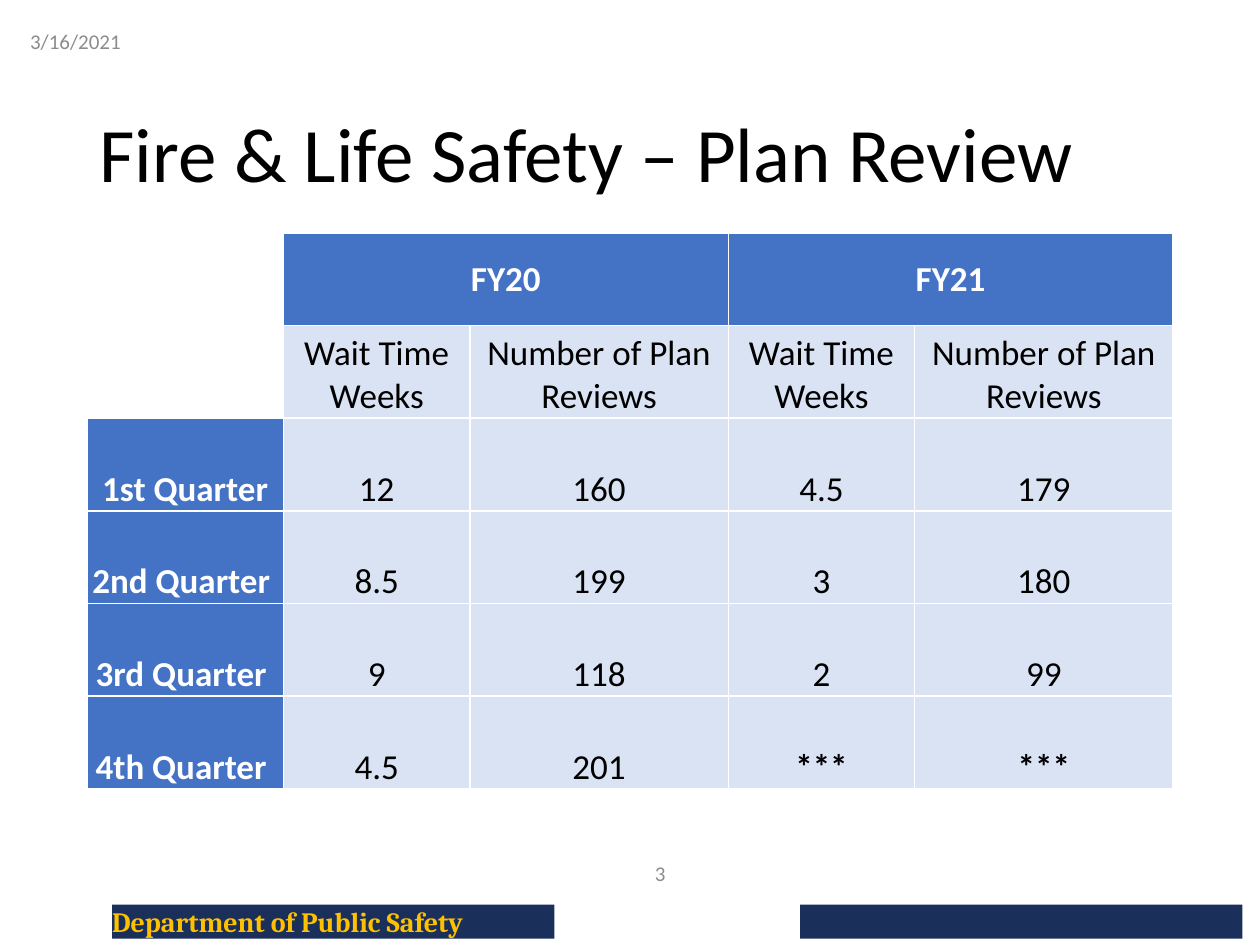
from lxml import etree
from pptx import Presentation
from pptx.dml.color import RGBColor
from pptx.enum.shapes import MSO_SHAPE
from pptx.enum.text import MSO_ANCHOR, MSO_AUTO_SIZE, PP_ALIGN
from pptx.oxml.ns import qn
from pptx.util import Inches, Pt

RECTANGLE = MSO_SHAPE.RECTANGLE
TOP, MIDDLE, BOTTOM = MSO_ANCHOR.TOP, MSO_ANCHOR.MIDDLE, MSO_ANCHOR.BOTTOM
LEFT, CENTER, RIGHT = PP_ALIGN.LEFT, PP_ALIGN.CENTER, PP_ALIGN.RIGHT
FIT_SHAPE, NO_FIT = MSO_AUTO_SIZE.SHAPE_TO_FIT_TEXT, MSO_AUTO_SIZE.NONE

COLORS = {"navy": "1A2F5A", "gold": "FFC000", "gray": "8C8C8C", "black": "000000",
          "white": "FFFFFF", "blue": "4472C4", "pale": "DAE3F3"}
COLUMNS, ROWS = 100, 75

MEASURES = ["Wait Time Weeks", "Number of Plan Reviews"]
QUARTERS = [
    ["1st Quarter", "12", "160", "4.5", "179"],
    ["2nd Quarter ", "8.5", "199", "3", "180"],
    ["3rd Quarter ", "9", "118", "2", "99"],
    ["4th Quarter ", "4.5", "201", "***", "***"],
]
TABLE_ROWS = [["", "FY20", "", "FY21", ""], ["", *MEASURES, *MEASURES], *QUARTERS]


class SlideBuilder:
    """Styles and places elements on the current slide by grid columns and rows."""

    def __init__(self, deck):
        self.deck = deck
        self.page = deck.slides.add_slide(deck.slide_layouts[5])

    def across(self, columns):
        return int(self.deck.slide_width * columns / COLUMNS)

    def down(self, rows):
        return int(self.deck.slide_height * rows / ROWS)

    def area(self, left, top, width, height):
        return self.across(left), self.down(top), self.across(width), self.down(height)

    def color(self, name):
        return RGBColor.from_string(COLORS[name])

    def set_text(self, para, text, size, color, bold=False, align=LEFT, font="Calibri"):
        para.text = text
        para.alignment = align
        para.font.name, para.font.size, para.font.bold = font, Pt(size), bold
        para.font.color.rgb = self.color(color)

    def title(self, text, *area):
        title = self.page.shapes.title
        title.left, title.top, title.width, title.height = self.area(*area)
        frame = title.text_frame
        frame.vertical_anchor, frame.auto_size, frame.word_wrap = MIDDLE, NO_FIT, True
        self.set_text(frame.paragraphs[0], text, 44, "black")
        frame.paragraphs[0].line_spacing = 0.9

    def label(self, text, *area, align=LEFT):
        frame = self.page.shapes.add_textbox(*self.area(*area)).text_frame
        frame.word_wrap, frame.vertical_anchor = True, MIDDLE
        self.set_text(frame.paragraphs[0], text, 12, "gray", align=align)

    def bar(self, *area, text=""):
        bar = self.page.shapes.add_shape(RECTANGLE, *self.area(*area))
        bar.shadow.inherit = False
        bar.fill.solid()
        bar.fill.fore_color.rgb = self.color("navy")
        bar.line.fill.background()
        if text:
            frame = bar.text_frame
            frame.margin_left = frame.margin_right = frame.margin_top = frame.margin_bottom = 0
            frame.vertical_anchor, frame.auto_size, frame.word_wrap = TOP, FIT_SHAPE, True
            self.set_text(frame.paragraphs[0], text, 16, "gold", bold=True, font="Cambria")

    def border(self, cell):
        properties = cell._tc.get_or_add_tcPr()
        for side in ("a:lnL", "a:lnR", "a:lnT", "a:lnB"):
            line = etree.SubElement(properties, qn(side), w=str(Pt(1)))
            fill = etree.SubElement(line, qn("a:solidFill"))
            etree.SubElement(fill, qn("a:srgbClr"), val=COLORS["white"])

    def cell(self, cell, text, fill, color, bold, anchor):
        self.border(cell)
        cell.fill.solid()
        cell.fill.fore_color.rgb = self.color(fill)
        cell.margin_left = cell.margin_right = cell.margin_top = Inches(0.01)
        cell.margin_bottom = 0
        cell.vertical_anchor = anchor
        if text:
            self.set_text(cell.text_frame.paragraphs[0], text, 20, color, bold, CENTER)

    def table(self, rows, widths, left, top, height):
        area = self.area(left, top, sum(widths), height)
        table = self.page.shapes.add_table(len(rows), len(widths), *area).table
        for column, width in zip(table.columns, widths):
            column.width = self.across(width)
        for start in (1, 3):
            table.cell(0, start).merge(table.cell(0, start + 1))
        for r, values in enumerate(rows):
            for c, text in enumerate(values):
                header = r == 0 or c == 0
                corner = c == 0 and r < 2
                fill = "white" if corner else "blue" if header else "pale"
                self.cell(table.cell(r, c), text, fill, "white" if header else "black",
                          header or text == "***", MIDDLE if r == 0 else BOTTOM)


def main():
    deck = Presentation()
    deck.slide_width, deck.slide_height = Inches(10), Inches(7.5)
    slide = SlideBuilder(deck)
    slide.bar(63.5, 71.8, 35.1, 2.7)
    slide.bar(8.9, 71.8, 35.1, 2.7, text="Department of Public Safety")
    slide.title("Fire & Life Safety – Plan Review", 6.9, 6.5, 86.2, 12)
    slide.label("3/16/2021", 1.4, 1.3, 22.5, 4)
    slide.label("3", 31.3, 67.3, 22.5, 4, align=RIGHT)
    slide.table(TABLE_ROWS, [15.6, 14.8, 20.5, 14.8, 20.5], 6.9, 18.5, 44.1)
    deck.save("out.pptx")


if __name__ == "__main__":
    main()
